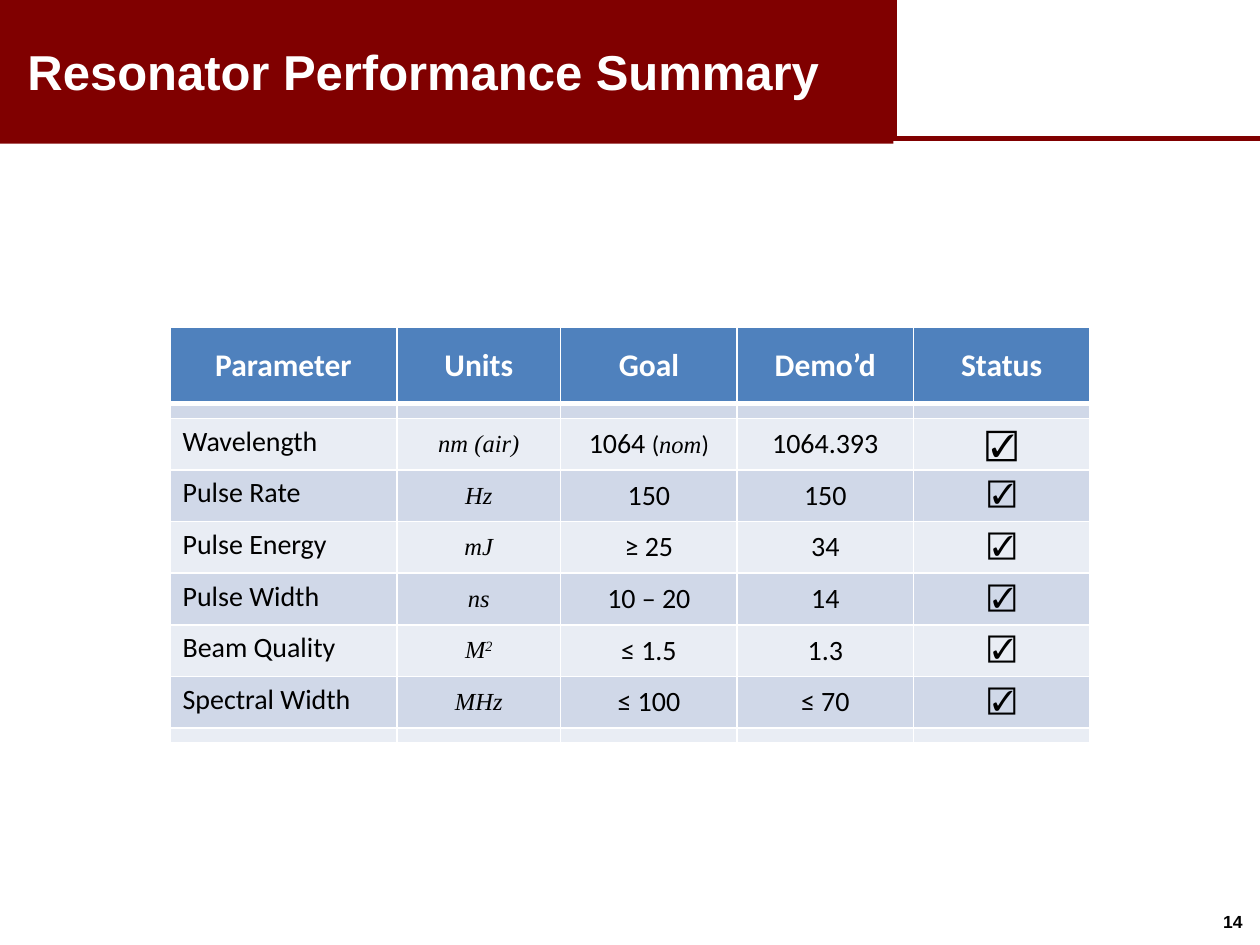
"""Build the resonator performance summary slide."""
from lxml.etree import SubElement
from pptx import Presentation
from pptx.dml.color import RGBColor
from pptx.enum.shapes import MSO_CONNECTOR, MSO_SHAPE
from pptx.enum.text import MSO_ANCHOR, PP_ALIGN
from pptx.oxml.ns import qn
from pptx.util import Inches, Pt

MAROON = RGBColor(0x80, 0x00, 0x00)
WHITE = RGBColor(0xFF, 0xFF, 0xFF)
BLACK = RGBColor(0x00, 0x00, 0x00)
HEADER_BLUE = RGBColor(0x4F, 0x81, 0xBD)
BAND_DARK = RGBColor(0xD0, 0xD8, 0xE8)
BAND_LIGHT = RGBColor(0xE9, 0xED, 0xF4)
SANS, SERIF = "Calibri", "Times New Roman"


def add_span(para, text, size, font=SANS, color=BLACK, bold=False, italic=False):
    span = para.add_run()
    span.text = text
    span.font.size = Pt(size)
    span.font.name = font
    span.font.color.rgb = color
    span.font.bold = bold
    span.font.italic = italic
    return span


def add_border(cell, side, width):
    line = SubElement(cell._tc.get_or_add_tcPr(), qn(f"a:ln{side}"), w=str(Pt(width)))
    fill = SubElement(line, qn("a:solidFill"))
    SubElement(fill, qn("a:srgbClr"), val=str(WHITE))


deck = Presentation()
deck.slide_width, deck.slide_height = Inches(10), Inches(7.5)
page = deck.slides.add_slide(deck.slide_layouts[6])

banner = page.shapes.add_shape(MSO_SHAPE.RECTANGLE, 0, 0, Inches(7.09), Inches(1.14))
banner.shadow.inherit = False
banner.fill.solid()
banner.fill.fore_color.rgb = MAROON
banner.line.fill.background()

number_box = page.shapes.add_textbox(Inches(9.32), Inches(7.18), Inches(0.64), Inches(0.27))
number_box.text_frame.word_wrap = True
para = number_box.text_frame.paragraphs[0]
para.alignment = PP_ALIGN.RIGHT
add_span(para, "14", 10, "Arial", bold=True)

for x1, y1, x2, y2 in [(0, 1.1, 10, 1.1), (7.1, 0, 7.1, 1.1)]:
    rule = page.shapes.add_connector(
        MSO_CONNECTOR.STRAIGHT, Inches(x1), Inches(y1), Inches(x2), Inches(y2))
    rule.line.color.rgb = MAROON
    rule.line.width = Pt(3)
    SubElement(rule._element.spPr, qn("a:effectLst"))

headings = ["Parameter", "Units", "Goal", "Demo’d", "Status"]
results = [
    ("Wavelength", "nm (air)", "1064 ", "1064.393"),
    ("Pulse Rate", "Hz", "150", "150"),
    ("Pulse Energy", "mJ", "≥ 25", "34"),
    ("Pulse Width", "ns", "10 – 20", "14"),
    ("Beam Quality", "M", "≤ 1.5", "1.3"),
    ("Spectral Width", "MHz", "≤ 100", "≤ 70"),
]
spacer = [""] * len(headings)
rows = [headings, spacer, *[(*result, "☑") for result in results], spacer]
column_widths = [1.8, 1.3, 1.4, 1.4, 1.4]
row_heights = [0.6, 0.12] + [0.41] * len(results) + [0.12]

table = page.shapes.add_table(
    len(rows), len(headings), Inches(1.35), Inches(2.6), Inches(7.3), Inches(3.3)).table
for column, width in zip(table.columns, column_widths):
    column.width = Inches(width)
for row, height in zip(table.rows, row_heights):
    row.height = Inches(height)

for r, texts in enumerate(rows):
    for c, text in enumerate(texts):
        cell = table.cell(r, c)
        for side in "LRTB":
            heavy = (r, side) in [(0, "B"), (1, "T")]
            add_border(cell, side, 3 if heavy else 1)
        cell.fill.solid()
        cell.fill.fore_color.rgb = HEADER_BLUE if r == 0 else BAND_DARK if r % 2 else BAND_LIGHT
        para = cell.text_frame.paragraphs[0]
        if not text:
            cell.margin_top = cell.margin_bottom = 0
            SubElement(para._p, qn("a:endParaRPr"), sz="100")
            continue
        cell.vertical_anchor = MSO_ANCHOR.MIDDLE
        para.alignment = PP_ALIGN.CENTER
        if r == 0:
            add_span(para, text, 18, color=WHITE, bold=True)
        elif c == 0:
            cell.vertical_anchor = MSO_ANCHOR.TOP
            para.alignment = PP_ALIGN.LEFT
            add_span(para, text, 16)
        elif c == 1:
            add_span(para, text, 14, SERIF, italic=True)
        elif c == 4:
            cell.vertical_anchor = MSO_ANCHOR.BOTTOM if r == 2 else MSO_ANCHOR.TOP
            add_span(para, text, 18 if r == 2 else 16, bold=True)
        else:
            add_span(para, text, 16)

wavelength_goal = table.cell(2, 2).text_frame.paragraphs[0]
add_span(wavelength_goal, "(", 14)
add_span(wavelength_goal, "nom", 14, SERIF, italic=True)
add_span(wavelength_goal, ")", 14)
beam_unit = table.cell(6, 1).text_frame.paragraphs[0]
exponent = add_span(beam_unit, "2", 14, SERIF, italic=True)
exponent.font._element.set("baseline", "30000")

title_box = page.shapes.add_textbox(0, 0, Inches(7.1), Inches(1.1))
title_box.text_frame.word_wrap = True
title_box.text_frame.vertical_anchor = MSO_ANCHOR.MIDDLE
para = title_box.text_frame.paragraphs[0]
para.line_spacing = Pt(36)
para._p.get_or_add_pPr().set("marL", str(Inches(0.12)))
add_span(para, "Resonator Performance Summary", 28, "Arial", WHITE, bold=True)

deck.save("out.pptx")
